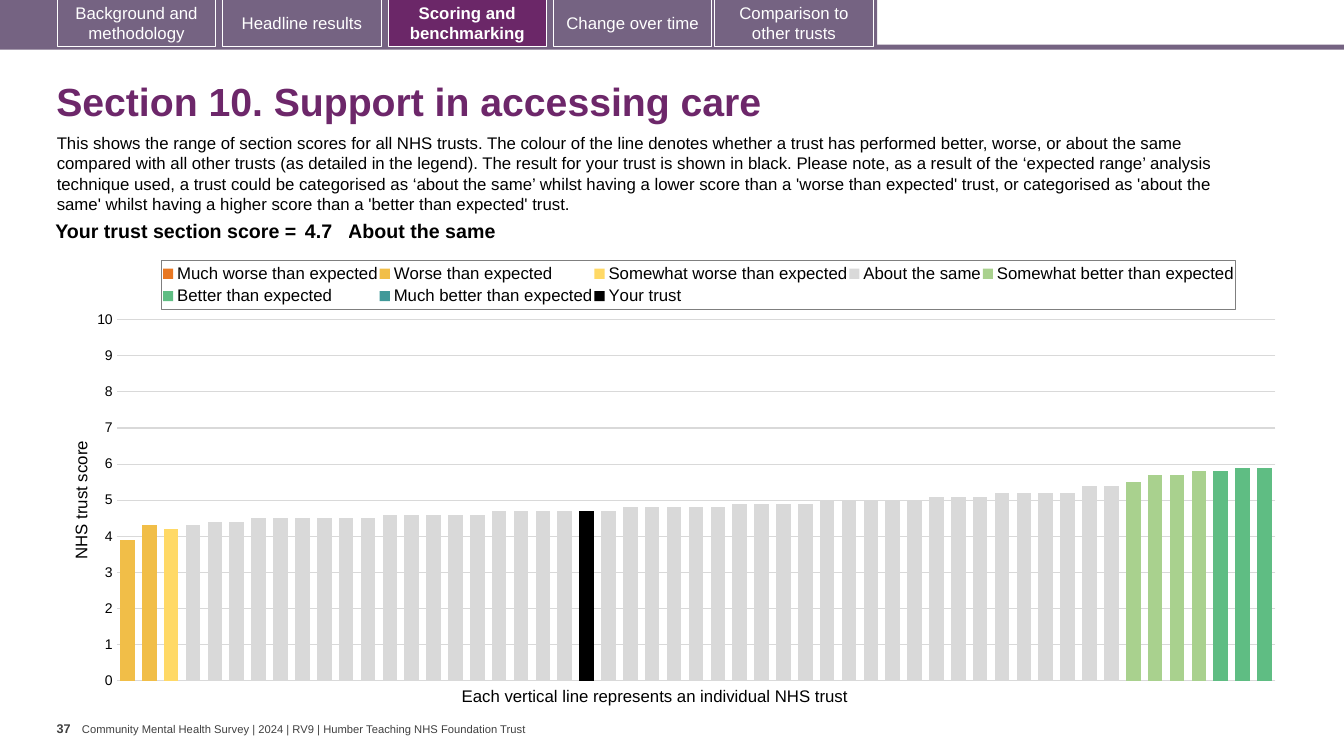
from copy import deepcopy
from pptx import Presentation
from pptx.chart.axis import ValueAxis
from pptx.chart.data import CategoryChartData
from pptx.dml.color import RGBColor
from pptx.enum.chart import XL_CHART_TYPE, XL_LEGEND_POSITION, XL_TICK_LABEL_POSITION, XL_TICK_MARK
from pptx.enum.shapes import MSO_SHAPE
from pptx.enum.text import MSO_ANCHOR, PP_ALIGN
from pptx.oxml import parse_xml
from pptx.oxml.ns import nsdecls
from pptx.util import Inches, Pt

CELL = Inches(1) / 12  # the slide is a grid of 160 columns by 90 rows


class Theme:
    font = "Arial"
    ink, foot, white, grid, frame = "000000", "404040", "FFFFFF", "D9D9D9", "7F7F7F"
    plum, active, bar = "6D276A", "6B2768", "756382"
    title, score, body, tick, page, small = 28, 14, 12, 10, 9, 8


TABS = ["Background and methodology", "Headline results", "Scoring and benchmarking",
        "Change over time", "Comparison to other trusts"]
CURRENT = 2
INTRO = (
    "This shows the range of section scores for all NHS trusts. The colour of the line denotes "
    "whether a trust has performed better, worse, or about the same compared with all other trusts "
    "(as detailed in the legend). The result for your trust is shown in black. Please note, as a "
    "result of the ‘expected range’ analysis technique used, a trust could be categorised as ‘about "
    "the same’ whilst having a lower score than a 'worse than expected' trust, or categorised as "
    "'about the same' whilst having a higher score than a 'better than expected' trust.")
SAME = [4.3, 4.4, 4.4, *[4.5] * 6, *[4.6] * 5, *[4.7] * 6, *[4.8] * 5, *[4.9] * 4,
        *[5] * 5, *[5.1] * 3, *[5.2] * 4, 5.4, 5.4]
COUNT = 53
BANDS = [  # name, colour, first trust, scores
    ("Much worse than expected", "E87722", 0, []),
    ("Worse than expected", "F1BE48", 0, [3.9, 4.3]),
    ("Somewhat worse than expected", "FFD966", 2, [4.2]),
    ("About the same", "D9D9D9", 3, SAME),
    ("Somewhat better than expected", "A9D18E", 46, [5.5, 5.7, 5.7, 5.8]),
    ("Better than expected", "5FBD83", 50, [5.8, 5.9, 5.9]),
    ("Much better than expected", "419999", 0, []),
    ("Your trust", "000000", 21, [4.7])]


def place(box):
    """Turn columns and rows into slide lengths."""
    return [round(part * CELL) for part in box]


def style(font, size, color=Theme.ink, bold=False):
    font.name, font.size, font.bold = Theme.font, Pt(size), bold
    font.color.rgb = RGBColor.from_string(color)


def write(frame, text, size, color=Theme.ink, bold=False, align=PP_ALIGN.LEFT):
    frame.text = text
    para = frame.paragraphs[0]
    para.alignment = align
    style(para.runs[0].font, size, color, bold)


def inset(part, side, ends):
    part.margin_left = part.margin_right = Inches(side)
    part.margin_top = part.margin_bottom = Inches(ends)


def label(slide, box, text, size, color=Theme.ink, bold=False, wrap=True, pad=(0.1, 0.05)):
    frame = slide.shapes.add_textbox(*place(box)).text_frame
    frame.word_wrap = wrap
    inset(frame, *pad)
    write(frame, text, size, color, bold)
    return frame


def block(slide, box, fill):
    shape = slide.shapes.add_shape(MSO_SHAPE.RECTANGLE, *place(box))
    shape.shadow.inherit = False
    shape.fill.solid()
    shape.fill.fore_color.rgb = RGBColor.from_string(fill)
    shape.line.fill.background()
    return shape


def header(slide, box):
    left, top, wide, high = box
    block(slide, (left, top + high - 0.6, wide, 0.6), Theme.bar)
    block(slide, (left, top, 104.4, high - 0.24), Theme.bar)
    for i, name in enumerate(TABS):
        here = i == CURRENT
        shift = 0.48 if i == len(TABS) - 1 else 0
        tab = block(slide, (left + 6.84 + 19.68 * i - shift, top - 0.12, 18.84, 5.64),
                    Theme.active if here else Theme.bar)
        tab.line.color.rgb = RGBColor.from_string(Theme.white)
        tab.line.width = Pt(0.75)
        tab.text_frame.word_wrap = True
        tab.text_frame.vertical_anchor = MSO_ANCHOR.MIDDLE
        write(tab.text_frame, name, Theme.body, Theme.white, here, PP_ALIGN.CENTER)


def intro(slide, box):
    left, top, wide, high = box
    frame = label(slide, (left, top, wide, 8.64), "Section 10. Support in accessing care",
                  Theme.title, Theme.plum, True)
    frame.vertical_anchor = MSO_ANCHOR.MIDDLE
    frame.paragraphs[0].line_spacing = 0.9
    label(slide, (left + 0.06, top + 7.2, 145.56, high - 7.2), INTRO, Theme.body)


def score(slide, box):
    table = slide.shapes.add_table(1, 3, *place(box)).table
    table.first_row = table.horz_banding = False
    parts = [("Your trust section score =", 31.56, 0.04, PP_ALIGN.RIGHT),
             ("4.7", 5.64, 0.04, PP_ALIGN.LEFT), ("About the same", 103.08, 0, PP_ALIGN.LEFT)]
    for i, (text, wide, pad, align) in enumerate(parts):
        table.columns[i].width = round(wide * CELL)
        cell = table.cell(0, i)
        cell.fill.background()
        inset(cell, pad, 0.04)
        write(cell.text_frame, text, Theme.score, bold=True, align=align)


def pin(node, spot, shares, inner=""):
    """Fix a chart part at percent shares of the chart's size."""
    for old in node.findall("{*}layout"):
        node.remove(old)
    sizes = "".join(f'<c:{key} val="{part / 100}"/>' for key, part in zip("xywh", shares))
    node.insert(spot, parse_xml(
        f'<c:layout {nsdecls("c")}><c:manualLayout>{inner}<c:xMode val="edge"/>'
        f'<c:yMode val="edge"/>{sizes}</c:manualLayout></c:layout>'))


def keys(chart):
    chart.has_legend = True
    legend = chart.legend
    legend.position = XL_LEGEND_POSITION.TOP
    legend.include_in_layout = False
    style(legend.font, Theme.body)
    node = legend._element
    pin(node, 1, (7.67, 2.55, 87.7, 11))
    node.find("{*}overlay").addnext(parse_xml(
        f'<c:spPr {nsdecls("c", "a")}><a:ln w="9525"><a:solidFill>'
        f'<a:srgbClr val="{Theme.frame}"/></a:solidFill></a:ln></c:spPr>'))


def split(area):
    """Move the last series to a second pair of axes on the right."""
    main = area.find("{*}barChart")
    twin = deepcopy(main)
    main.remove(main.findall("{*}ser")[-1])
    for bar in twin.findall("{*}ser")[:-1]:
        twin.remove(bar)
    main.addnext(twin)
    axes = [deepcopy(area.find("{*}" + kind)) for kind in ("valAx", "catAx")]
    area.findall("{*}valAx")[-1].addnext(axes[0])
    axes[0].addnext(axes[1])
    fresh = {ref.get("val"): str(9001 + i) for i, ref in enumerate(twin.findall("{*}axId"))}
    for node in (twin, *axes):
        for ref in node.findall("{*}axId") + node.findall("{*}crossAx"):
            ref.set("val", fresh[ref.get("val")])
    axes[0].find("{*}axPos").set("val", "r")
    axes[0].find("{*}crosses").set("val", "max")
    right = ValueAxis(axes[0])
    right.has_title = right.has_major_gridlines = False
    right.major_tick_mark = XL_TICK_MARK.OUTSIDE
    right.tick_label_position = XL_TICK_LABEL_POSITION.NONE


def scores(slide, box):
    data = CategoryChartData()
    data.categories = [str(n + 1) for n in range(COUNT)]
    for name, _, first, vals in BANDS:
        data.add_series(name, [None] * first + vals + [None] * (COUNT - first - len(vals)))
    chart = slide.shapes.add_chart(XL_CHART_TYPE.COLUMN_CLUSTERED, *place(box), data).chart
    chart.has_title = False
    style(chart.font, Theme.tick)
    plot = chart.plots[0]
    plot.gap_width, plot.overlap, plot.vary_by_categories = 50, 100, False
    for series, (_, color, _, _) in zip(plot.series, BANDS):
        series.format.fill.solid()
        series.format.fill.fore_color.rgb = RGBColor.from_string(color)
    chart.category_axis.visible = False
    axis = chart.value_axis
    axis.minimum_scale, axis.maximum_scale, axis.major_unit = 0, 10, 1
    axis.major_tick_mark = axis.minor_tick_mark = XL_TICK_MARK.NONE
    axis.format.line.fill.background()
    axis.major_gridlines.format.line.color.rgb = RGBColor.from_string(Theme.grid)
    axis.major_gridlines.format.line.width = Pt(0.75)
    style(axis.tick_labels.font, Theme.tick)
    write(axis.axis_title.text_frame, "NHS trust score", Theme.body, align=PP_ALIGN.CENTER)
    area = chart._chartSpace.chart.plotArea
    pin(area, 0, (4, 15.8, 94.6, 80.7), '<c:layoutTarget val="inner"/>')
    split(area)
    keys(chart)
    label(slide, (box[0] + 45.72, box[1] + box[3] - 1.92, 49.32, 3.6),
          "Each vertical line represents an individual NHS trust", Theme.body, wrap=False)


def footer(slide, box):
    left, top, wide, high = box
    label(slide, (left, top, 3, high), "37", Theme.page, Theme.foot, True, False, (0, 0.05))
    label(slide, (left + 3, top + 0.76, wide - 3, 1.56),
          "Community Mental Health Survey | 2024 | RV9 | Humber Teaching NHS Foundation Trust",
          Theme.small, Theme.foot, False, False, (0, 0)).vertical_anchor = MSO_ANCHOR.MIDDLE


deck = Presentation()
deck.slide_width, deck.slide_height = Inches(13.33), Inches(7.5)
page = deck.slides.add_slide(deck.slide_layouts[6])
header(page, (0, 0, 160, 5.92))
intro(page, (5.52, 8.04, 149.88, 18.12))
scores(page, (8.04, 29.64, 145.8, 53.28))
score(page, (4.25, 25.8, 140.28, 3.72))
footer(page, (6.75, 85.2, 56.76, 4.8))
deck.save("out.pptx")
